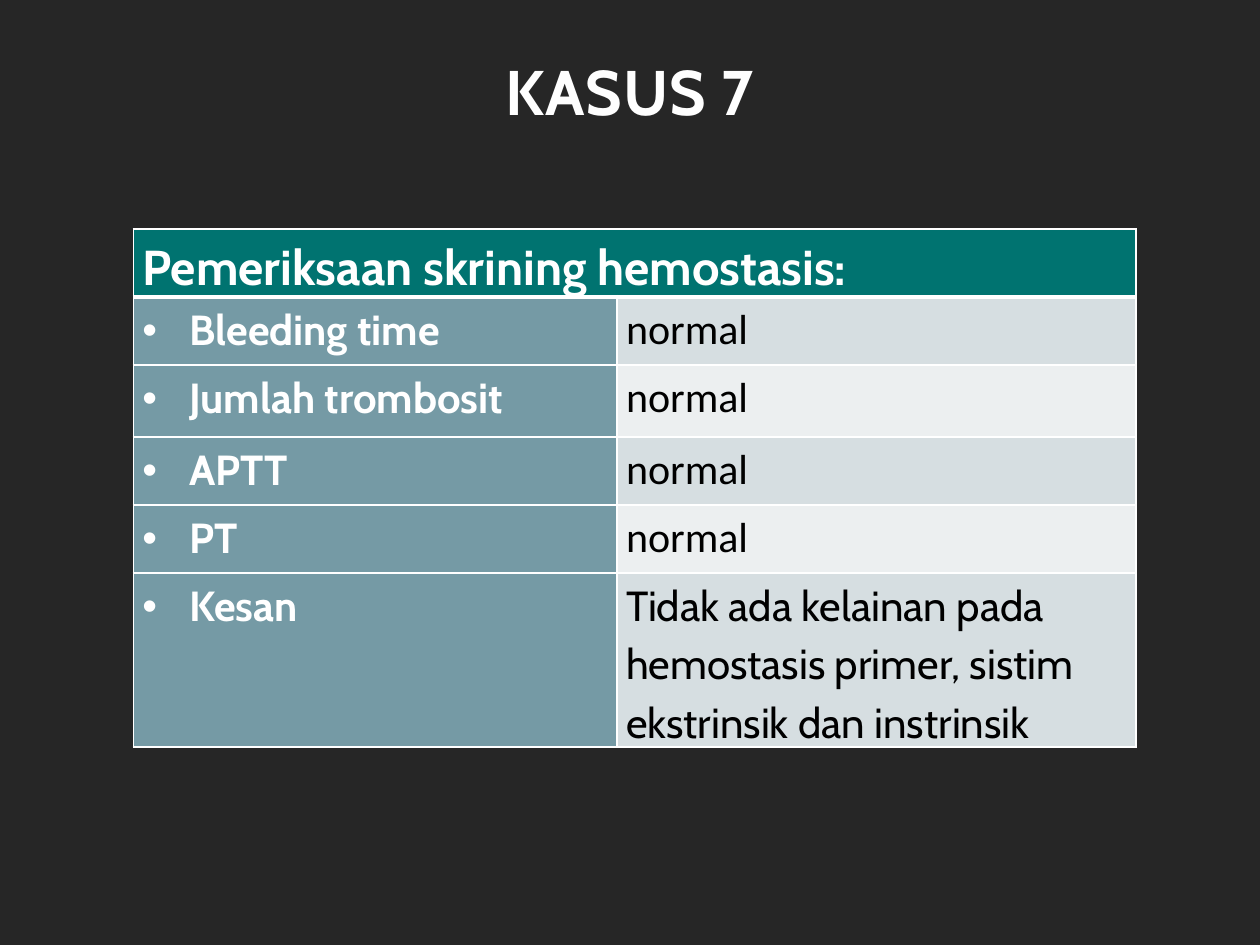
import lxml.etree
import pptx
import pptx.dml.color
import pptx.enum.text
import pptx.oxml.ns
import pptx.util

Cm = pptx.util.Cm
Pt = pptx.util.Pt
qn = pptx.oxml.ns.qn
Align = pptx.enum.text.PP_ALIGN
Anchor = pptx.enum.text.MSO_ANCHOR

TITLE = "KASUS 7"
HEADING = "Pemeriksaan skrining hemostasis:"
RESULTS = [
    ("Bleeding time", "normal"),
    ("Jumlah trombosit", "normal"),
    ("APTT", "normal"),
    ("PT", "normal"),
    ("Kesan", "Tidak ada kelainan pada hemostasis primer, sistim ekstrinsik dan instrinsik"),
]
COLUMN_WIDTHS = [9.75, 10.46]
ROW_HEIGHTS = [1.37, 1.37, 1.45, 1.37, 1.37, 2.95]

THEME = {
    "background": "262626",
    "outline": "384F55",
    "border": "FFFFFF",
    "heading_fill": "007370",
    "label_fill": "759AA5",
    "value_fills": ["D6DEE1", "ECEFF0"],
    "title": {"name": "Cabin", "size": Pt(36), "bold": True, "color": "FEFEFE"},
    "heading": {"name": "Cabin", "size": Pt(28), "bold": True, "color": "FFFFFF"},
    "label": {"name": "Cabin", "size": Pt(24), "bold": True, "color": "FFFFFF"},
    "value": {"name": "Calibri", "size": Pt(24), "bold": False, "color": "000000"},
    "conclusion": {"name": "Cabin", "size": Pt(24), "bold": False, "color": "000000"},
}
CELL_FORMAT = {
    "margin_left": Cm(0.18),
    "margin_right": Cm(0.18),
    "margin_top": 0,
    "margin_bottom": 0,
}


def set_attributes(target, values):
    for name, value in values.items():
        setattr(target, name, value)


def set_fill(fill, color):
    fill.solid()
    fill.fore_color.rgb = pptx.dml.color.RGBColor.from_string(color)


def write(paragraph, text, style):
    run = paragraph.add_run()
    run.text = text
    set_attributes(run.font, {key: style[key] for key in ("name", "size", "bold")})
    set_fill(run.font.fill, style["color"])
    return run


def make_line(tag, color, points):
    line = lxml.etree.Element(qn(tag), w=str(int(Pt(points))))
    fill = lxml.etree.SubElement(line, qn("a:solidFill"))
    lxml.etree.SubElement(fill, qn("a:srgbClr"), val=color)
    return line


def add_bullet(paragraph):
    properties = paragraph._p.get_or_add_pPr()
    properties.set("marL", str(Cm(0.95)))
    properties.set("indent", str(-Cm(0.95)))
    lxml.etree.SubElement(properties, qn("a:buFont"), typeface="Arial")
    lxml.etree.SubElement(properties, qn("a:buChar"), char="•")


def format_cell(cell, row, fill):
    set_attributes(cell, CELL_FORMAT)
    set_fill(cell.fill, fill)
    widths = {"L": 1, "R": 1, "T": 3 if row == 1 else 1, "B": 3 if row == 0 else 1}
    properties = cell._tc.get_or_add_tcPr()
    for index, (side, points) in enumerate(widths.items()):
        properties.insert(index, make_line("a:ln" + side, THEME["border"], points))


def fill_cell(cell, text, style, alignment=Align.LEFT):
    paragraph = cell.text_frame.paragraphs[0]
    set_attributes(paragraph, {"alignment": alignment, "line_spacing": 1.15})
    write(paragraph, text, THEME[style])
    return paragraph


def add_title(slide):
    shape = slide.shapes.add_textbox(Cm(1.27), Cm(-0.48), Cm(22.86), Cm(3.18))
    set_attributes(shape.text_frame, {"word_wrap": True, "vertical_anchor": Anchor.BOTTOM})
    paragraph = shape.text_frame.paragraphs[0]
    paragraph.alignment = Align.CENTER
    properties = write(paragraph, TITLE, THEME["title"])._r.get_or_add_rPr()
    properties.set("spc", "50")
    properties.insert(0, make_line("a:ln", THEME["outline"], 1.05))


def add_results(slide):
    table = slide.shapes.add_table(
        len(ROW_HEIGHTS), len(COLUMN_WIDTHS), Cm(2.69), Cm(4.62),
        Cm(sum(COLUMN_WIDTHS)), Cm(sum(ROW_HEIGHTS)),
    ).table
    for column, width in zip(table.columns, COLUMN_WIDTHS):
        column.width = Cm(width)
    for row, height in zip(table.rows, ROW_HEIGHTS):
        row.height = Cm(height)

    table.cell(0, 0).merge(table.cell(0, 1))
    for cell in table.rows[0].cells:
        format_cell(cell, 0, THEME["heading_fill"])
    fill_cell(table.cell(0, 0), HEADING, "heading")

    for row, (label, value) in enumerate(RESULTS, start=1):
        label_cell, value_cell = table.rows[row].cells
        format_cell(label_cell, row, THEME["label_fill"])
        format_cell(value_cell, row, THEME["value_fills"][(row - 1) % 2])
        add_bullet(fill_cell(label_cell, label, "label", Align.JUSTIFY))
        fill_cell(value_cell, value, "conclusion" if row == len(RESULTS) else "value")


def main():
    presentation = pptx.Presentation()
    set_attributes(presentation, {"slide_width": Cm(25.4), "slide_height": Cm(19.05)})
    slide = presentation.slides.add_slide(presentation.slide_layouts[6])
    set_fill(slide.background.fill, THEME["background"])
    add_title(slide)
    add_results(slide)
    presentation.save("out.pptx")


if __name__ == "__main__":
    main()
